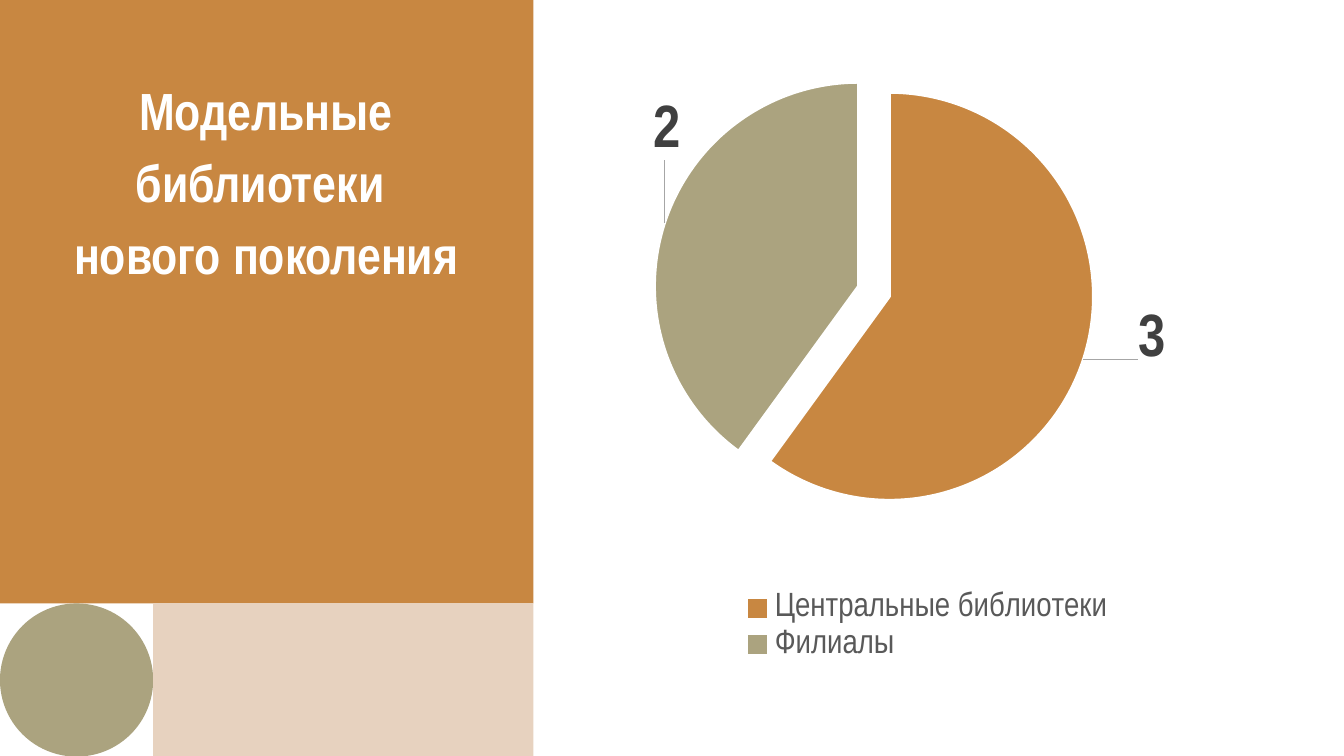
"""Build the slide on model libraries of the new generation with a pie chart."""
import pptx
import pptx.chart.data
import pptx.dml.color
import pptx.enum.chart
import pptx.enum.shapes
import pptx.enum.text
import pptx.oxml
import pptx.oxml.ns
import pptx.util

Inches = pptx.util.Inches
Pt = pptx.util.Pt
qn = pptx.oxml.ns.qn
FONT = "Arial Narrow"
COLORS = {"ochre": "C88741", "olive": "ABA37F", "sand": "E7D2BF", "white": "FFFFFF",
          "label": "404040", "legend": "595959", "leader": "A6A6A6"}


def style(font, size, color, bold):
    font.name, font.size, font.bold = FONT, Pt(size), bold
    font.color.rgb = pptx.dml.color.RGBColor.from_string(COLORS[color])


def manual_layout(**values):
    items = "".join(f'<c:{key} val="{val}"/>' for key, val in values.items())
    ns = pptx.oxml.ns.nsdecls("c")
    return pptx.oxml.parse_xml(f"<c:layout {ns}><c:manualLayout>{items}</c:manualLayout></c:layout>")


prs = pptx.Presentation()
prs.slide_width = Inches(10)
prs.slide_height = prs.slide_width * 9 // 16
s = prs.slides.add_slide(prs.slide_layouts[5])

shape_types = pptx.enum.shapes.MSO_SHAPE
for kind, x, y, w, h, color in [
    (shape_types.RECTANGLE, 0, 0, 3.97, 4.49, "ochre"),
    (shape_types.OVAL, 0, 4.49, 1.14, 1.14, "olive"),
    (shape_types.RECTANGLE, 1.14, 4.49, 2.83, 1.14, "sand"),
]:
    sp = s.shapes.add_shape(kind, Inches(x), Inches(y), Inches(w), Inches(h))
    sp.shadow.inherit = False
    sp.fill.solid()
    sp.fill.fore_color.rgb = pptx.dml.color.RGBColor.from_string(COLORS[color])
    sp.line.fill.background()

data = pptx.chart.data.CategoryChartData()
data.categories = ["Центральные библиотеки", "Филиалы"]
data.add_series("Series 1", (3, 2))
chart = s.shapes.add_chart(pptx.enum.chart.XL_CHART_TYPE.PIE, Inches(4.07), Inches(0.46),
                           Inches(5.66), Inches(4.51), data).chart
chart.has_title = False
chart.font.name, chart.font.size = "Arial", Pt(10)
plot_area = chart.plots[0]._element.getparent()
for old in plot_area.findall(qn("c:layout")):
    plot_area.remove(old)
plot_area.insert(0, manual_layout(layoutTarget="inner", xMode="edge", yMode="edge",
                                  x=0.002, y=0.034, w=0.815, h=0.673))

chart.has_legend = True
legend = chart.legend
legend.position = pptx.enum.chart.XL_LEGEND_POSITION.BOTTOM
legend.include_in_layout = False
style(legend.font, 18, "legend", False)
for old in legend._element.findall(qn("c:layout")):
    legend._element.remove(old)
legend._element.find(qn("c:legendPos")).addnext(
    manual_layout(xMode="edge", yMode="edge", x=0.25, y=0.867, w=0.5, h=0.13))

series = chart.plots[0].series[0]
labels = series.data_labels
labels.show_value = True
labels.position = pptx.enum.chart.XL_LABEL_POSITION.OUTSIDE_END
style(labels.font, 32, "label", True)
for i, (color, dx, dy) in enumerate([("ochre", 0.062, -0.08), ("olive", 0.032, -0.1)]):
    point = series.points[i]
    point.format.fill.solid()
    point.format.fill.fore_color.rgb = pptx.dml.color.RGBColor.from_string(COLORS[color])
    point.format.line.color.rgb = pptx.dml.color.RGBColor.from_string(COLORS["white"])
    point.format.line.width = Pt(1.5)
    style(point.data_label.font, 32, "label", True)
    point.data_label.position = pptx.enum.chart.XL_LABEL_POSITION.OUTSIDE_END
    label = labels._element.findall(qn("c:dLbl"))[i]
    label.find(qn("c:idx")).addnext(manual_layout(x=dx, y=dy))
explosion = pptx.oxml.parse_xml(f'<c:explosion {pptx.oxml.ns.nsdecls("c")} val="16"/>')
series._element.find(qn("c:dPt")).find(qn("c:idx")).addnext(explosion)

for old in labels._element.findall(qn("c:showLeaderLines")):
    labels._element.remove(old)
ns = pptx.oxml.ns.nsdecls("c", "a")
for xml in (
    f'<c:showLeaderLines {ns} val="1"/>',
    f'<c:leaderLines {ns}><c:spPr><a:ln w="{Pt(0.75)}"><a:solidFill>'
    f'<a:srgbClr val="{COLORS["leader"]}"/></a:solidFill></a:ln></c:spPr></c:leaderLines>',
):
    labels._element.append(pptx.oxml.parse_xml(xml))

title = s.shapes.title
title.left, title.top, title.width, title.height = Inches(0.08), Inches(0.46), Inches(3.8), Inches(1.68)
s.shapes._spTree.append(title._element)
tf = title.text_frame
tf.word_wrap = True
tf.auto_size = pptx.enum.text.MSO_AUTO_SIZE.NONE
tf.vertical_anchor = pptx.enum.text.MSO_ANCHOR.TOP
for i, text in enumerate(["Модельные библиотеки ", "нового поколения"]):
    p = tf.add_paragraph() if i else tf.paragraphs[0]
    p.alignment = pptx.enum.text.PP_ALIGN.CENTER
    p.line_spacing = 1.15
    p.space_before = Pt(0)
    r = p.add_run()
    r.text = text
    style(r.font, 28, "white", True)

prs.save("out.pptx")
